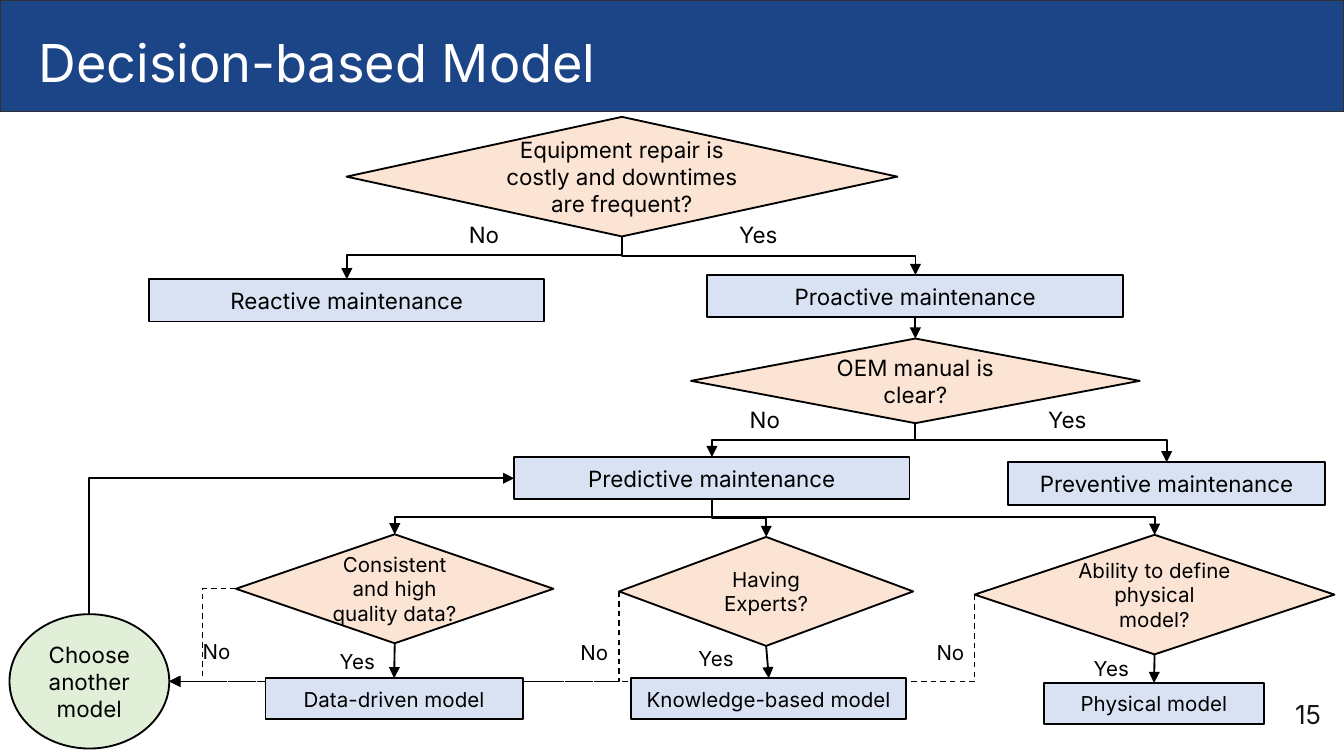
from dataclasses import dataclass

import pptx
import pptx.dml.color
import pptx.enum.dml
import pptx.enum.shapes
import pptx.enum.text
import pptx.oxml
import pptx.oxml.ns
import pptx.util

Cm, Pt = pptx.util.Cm, pptx.util.Pt
qn = pptx.oxml.ns.qn
SHAPE = pptx.enum.shapes.MSO_SHAPE
LINE = pptx.enum.shapes.MSO_CONNECTOR
ALIGN = pptx.enum.text.PP_ALIGN
ANCHOR = pptx.enum.text.MSO_ANCHOR
FONT = "Inter"
WIDTH, HEIGHT, BAND = 25.4, 14.29, 2.11
STYLES = {
    "step": (SHAPE.RECTANGLE, "D8E2F3"),
    "question": (SHAPE.FLOWCHART_DECISION, "FBE4D4"),
    "retry": (SHAPE.OVAL, "E1EFD8"),
}


@dataclass
class Node:
    text: str
    kind: str
    x: float
    y: float
    w: float
    h: float
    size: int = 12

    @property
    def top(self):
        return self.x + self.w / 2, self.y

    @property
    def bottom(self):
        return self.x + self.w / 2, self.y + self.h

    @property
    def left(self):
        return self.x, self.y + self.h / 2

    @property
    def right(self):
        return self.x + self.w, self.y + self.h / 2


@dataclass
class Label:
    text: str
    x: float
    y: float
    w: float
    size: int = 12


def rgb(value: str):
    return pptx.dml.color.RGBColor.from_string(value)


def write(s, text: str, size: int, color: str = "000000", align=ALIGN.CENTER,
          anchor=ANCHOR.MIDDLE, margin: float = 0.13):
    tf = s.text_frame
    tf.word_wrap = True
    tf.auto_size = pptx.enum.text.MSO_AUTO_SIZE.NONE
    tf.vertical_anchor = anchor
    tf.margin_left = tf.margin_right = Cm(0.25)
    tf.margin_top = tf.margin_bottom = Cm(margin)
    p = tf.paragraphs[0]
    p.text = text
    p.alignment = align
    p.font.name, p.font.size = FONT, Pt(size)
    p.font.color.rgb = rgb(color)


def add_box(shapes, shape, x: float, y: float, w: float, h: float,
            fill: str, line: str, width: float = 1):
    s = shapes.add_shape(shape, Cm(x), Cm(y), Cm(w), Cm(h))
    s.shadow.inherit = False
    s.fill.solid()
    s.fill.fore_color.rgb = rgb(fill)
    s.line.color.rgb = rgb(line)
    s.line.width = Pt(width)
    return s


def add_node(shapes, node: Node):
    shape, fill = STYLES[node.kind]
    s = add_box(shapes, shape, node.x, node.y, node.w, node.h, fill, "000000")
    write(s, node.text, node.size)


def add_text(shapes, label: Label, h: float, **style):
    s = shapes.add_textbox(Cm(label.x), Cm(label.y), Cm(label.w), Cm(h))
    write(s, label.text, label.size, **style)


def add_arrow(shapes, kind, start, end, dashed: bool = False):
    s = shapes.add_connector(kind, *(Cm(v) for v in (*start, *end)))
    s.line.color.rgb = rgb("000000")
    s.line.width = Pt(0.75 if dashed else 1)
    if dashed:
        s.line.dash_style = pptx.enum.dml.MSO_LINE.DASH
    ln = s.line._get_or_add_ln()
    ln.append(ln.makeelement(qn("a:tailEnd"), {"type": "triangle"}))
    sppr = s._element.spPr
    sppr.append(sppr.makeelement(qn("a:effectLst"), {}))
    return s


def set_bend(s, share: float):
    """Place the middle leg of an elbow at a share of its run."""
    av = s._element.spPr.find(qn("a:prstGeom")).get_or_add_avLst()
    guide = {"name": "adj1", "fmla": f"val {round(share * 100000)}"}
    av.append(av.makeelement(qn("a:gd"), guide))


def add_turned_elbow(shapes, start, end):
    """Draw an elbow whose first leg is vertical, by turning a level one."""
    (x1, y1), (x2, y2) = start, end
    cx, cy = (x1 + x2) / 2, (y1 + y2) / 2
    dx, dy = abs(y2 - y1) / 2, abs(x2 - x1) / 2
    side = -1 if x2 > x1 and y2 > y1 else 1
    s = add_arrow(shapes, LINE.ELBOW, (cx - side * dx, cy - dy),
                  (cx + side * dx, cy + dy))
    turn = 270 if x2 > x1 else 90
    s._element.spPr.find(qn("a:xfrm")).set("rot", str(turn * 60000))
    return s


def main():
    repair = Node("Equipment repair is costly and downtimes are frequent?",
                  "question", 6.55, 2.21, 10.41, 2.26)
    reactive = Node("Reactive maintenance", "step", 2.82, 5.28, 7.47, 0.8)
    proactive = Node("Proactive maintenance", "step", 13.37, 5.2, 7.86, 0.8)
    manual = Node("OEM manual is clear?", "question", 13.06, 6.4, 8.48, 1.6)
    predictive = Node("Predictive maintenance", "step", 9.72, 8.64, 7.47, 0.8)
    preventive = Node("Preventive maintenance", "step", 19.05, 8.74, 6, 0.8)
    data = Node("Consistent and high quality data?", "question",
                4.46, 10.1, 6, 2.06, 11)
    experts = Node("Having Experts?", "question", 11.7, 10.15, 5.56, 2.06, 11)
    physics = Node("Ability to define physical model?", "question",
                   18.42, 10.11, 6.8, 2.26, 11)
    data_model = Node("Data-driven model", "step", 5.02, 12.82, 4.86, 0.78, 11)
    expert_model = Node("Knowledge-based model", "step",
                        11.93, 12.82, 5.2, 0.78, 11)
    physical_model = Node("Physical model", "step",
                          19.73, 12.91, 4.16, 0.78, 11)
    retry = Node("Choose another model", "retry", 0.18, 11.61, 3.02, 2.54)
    nodes = [repair, reactive, proactive, manual, predictive, preventive, data,
             experts, physics, data_model, expert_model, physical_model, retry]
    branches = [(repair, reactive, 0.44), (repair, proactive, 0.5),
                (manual, predictive, 0.5), (manual, preventive, 0.43),
                (predictive, data, 0.5), (predictive, experts, 0.5),
                (predictive, physics, 0.5)]
    drops = [(proactive, manual), (data, data_model),
             (experts, expert_model), (physics, physical_model)]
    retries = [(data, 0.5), (experts, 0), (physics, 0)]
    labels = [
        Label("No", 8.61, 4.06, 2.64), Label("Yes", 13.72, 4.06, 1.55),
        Label("No", 13.92, 7.54, 2.08), Label("Yes", 19.56, 7.54, 1.42),
        Label("No", 3.58, 11.94, 1.5, 11), Label("Yes", 6.17, 12.14, 2.16, 11),
        Label("No", 10.72, 11.96, 1.55, 11),
        Label("Yes", 12.95, 12.09, 2.16, 11),
        Label("No", 17.45, 11.96, 1.17, 11),
        Label("Yes", 20.42, 12.27, 2.08, 11),
    ]

    prs = pptx.Presentation()
    prs.slide_width, prs.slide_height = Cm(WIDTH), Cm(HEIGHT)
    slide = prs.slides.add_slide(prs.slide_layouts[5])
    slide.background.fill.solid()
    slide.background.fill.fore_color.rgb = rgb("1C4587")
    shapes = slide.shapes
    add_box(shapes, SHAPE.RECTANGLE, 0, BAND, WIDTH, HEIGHT - BAND,
            "FFFFFF", "FFFFFF", 2)
    add_box(shapes, SHAPE.RECTANGLE, 0, 0, WIDTH, BAND,
            "1C4587", "303030", 0.75)

    title = shapes.title
    title.left, title.top = Cm(0.48), Cm(0.33)
    title.width, title.height = Cm(23.67), Cm(1.6)
    write(title, "Decision-based Model", 28, "FFFFFF", ALIGN.LEFT,
          ANCHOR.TOP, 0.25)
    shapes._spTree.append(title._element)  # in front of the band

    for node, share in retries:
        s = add_arrow(shapes, LINE.ELBOW, node.left, retry.right, dashed=True)
        set_bend(s, share)
    for source, target, share in branches:
        set_bend(add_turned_elbow(shapes, source.bottom, target.top), share)
    for source, target in drops:
        add_arrow(shapes, LINE.STRAIGHT, source.bottom, target.top)
    loop = add_turned_elbow(shapes, retry.top, predictive.left)
    loop._element.spPr.find(qn("a:prstGeom")).set("prst", "bentConnector2")

    for node in nodes:
        add_node(shapes, node)
    for label in labels:
        add_text(shapes, label, 0.75, align=ALIGN.LEFT, anchor=ANCHOR.TOP)
    add_text(shapes, Label("15", 23.7, 12.95, 1.52, 14), 1.09,
             color="161616", align=ALIGN.RIGHT, margin=0.25)
    prs.save("out.pptx")


if __name__ == "__main__":
    main()
